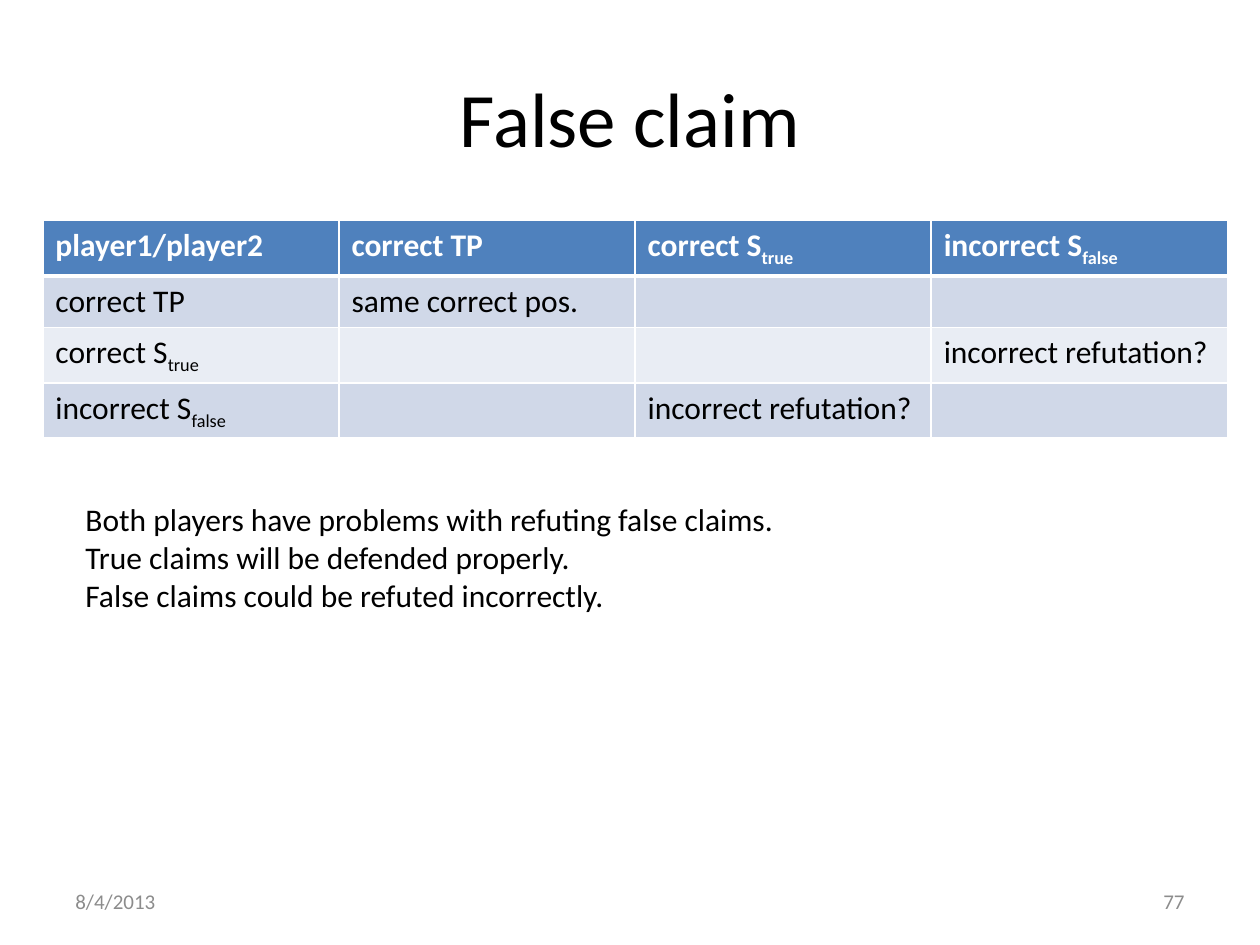
import dataclasses
import typing

import pptx
import pptx.dml.color
import pptx.enum.text
import pptx.oxml
import pptx.oxml.ns
import pptx.util

WIDTH, HEIGHT = 10, 7.5
FONT = "Calibri"
BLACK, WHITE, GREY = "000000", "FFFFFF", "8C8C8C"
HEADER_FILL, BAND_FILLS = "4F81BD", ("D0D8E8", "E9EDF4")
COLUMN_WIDTH, ROW_HEIGHT = 2.35, 0.41
TABLE_LEFT, TABLE_TOP = 0.34, 1.75
LEFT = pptx.enum.text.PP_ALIGN.LEFT
CENTER = pptx.enum.text.PP_ALIGN.CENTER
RIGHT = pptx.enum.text.PP_ALIGN.RIGHT
TOP = pptx.enum.text.MSO_ANCHOR.TOP
MIDDLE = pptx.enum.text.MSO_ANCHOR.MIDDLE

# An underscore starts the subscript of a cell's text.
ROWS = [
    ["player1/player2", "correct TP", "correct S_true", "incorrect S_false"],
    ["correct TP", "same correct pos.", "", ""],
    ["correct S_true", "", "", "incorrect refutation?"],
    ["incorrect S_false", "", "incorrect refutation?", ""],
]


@dataclasses.dataclass
class Label:
    """Text with its box as shares of the slide's width and height."""
    lines: list[str]
    left: float
    top: float
    width: float
    height: float
    size: int
    color: str = BLACK
    align: typing.Any = LEFT
    anchor: typing.Any = MIDDLE
    wrap: bool = True


TITLE = Label(["False claim"], 0.05, 0.04, 0.9, 1 / 6, 44, align=CENTER)
LABELS = [
    Label(["8/4/2013"], 0.05, 0.927, 0.233, 0.053, 12, GREY),
    Label(["77"], 0.717, 0.927, 0.233, 0.053, 12, GREY, RIGHT),
    Label(
        [
            "Both players have problems with refuting false claims.",
            "True claims will be defended properly.",
            "False claims could be refuted incorrectly.",
        ],
        0.058, 0.523, 0.58, 0.136, 18, anchor=TOP, wrap=False,
    ),
]


def rgb(color: str) -> pptx.dml.color.RGBColor:
    return pptx.dml.color.RGBColor.from_string(color)


def add_run(paragraph, text: str, size: int, color: str, bold: bool = False):
    run = paragraph.add_run()
    run.text = text
    formats = {"name": FONT, "size": pptx.util.Pt(size), "bold": bold}
    for name, value in formats.items():
        setattr(run.font, name, value)
    run.font.color.rgb = rgb(color)
    return run


def write_label(shape, label: Label) -> None:
    places = {
        "left": label.left * WIDTH, "top": label.top * HEIGHT,
        "width": label.width * WIDTH, "height": label.height * HEIGHT,
    }
    for name, value in places.items():
        setattr(shape, name, pptx.util.Inches(value))
    frame = shape.text_frame
    frame.word_wrap = label.wrap
    frame.vertical_anchor = label.anchor
    for index, line in enumerate(label.lines):
        paragraph = frame.add_paragraph() if index else frame.paragraphs[0]
        paragraph.alignment = label.align
        add_run(paragraph, line, label.size, label.color)


def add_borders(cell, widths: dict[str, int]) -> None:
    properties = cell._tc.get_or_add_tcPr()
    for side, points in widths.items():
        properties.append(pptx.oxml.parse_xml(
            f'<a:ln{side} {pptx.oxml.ns.nsdecls("a")} w="{pptx.util.Pt(points)}">'
            f'<a:solidFill><a:srgbClr val="{WHITE}"/></a:solidFill></a:ln{side}>'
        ))


def fill_cell(cell, text: str, row: int) -> None:
    header = row == 0
    # The line under the header is shared by the first two rows.
    add_borders(cell, {"L": 1, "R": 1, "T": 3 if row == 1 else 1, "B": 3 if header else 1})
    cell.fill.solid()
    cell.fill.fore_color.rgb = rgb(HEADER_FILL if header else BAND_FILLS[(row - 1) % 2])
    if not text:
        return
    paragraph = cell.text_frame.paragraphs[0]
    color = WHITE if header else BLACK
    base, _, subscript = text.partition("_")
    add_run(paragraph, base, 18, color, header)
    if subscript:
        run = add_run(paragraph, subscript, 18, color, header)
        run.font._element.set("baseline", "-25000")


def add_claim_table(slide) -> None:
    columns = len(ROWS[0])
    box = (TABLE_LEFT, TABLE_TOP, columns * COLUMN_WIDTH, len(ROWS) * ROW_HEIGHT)
    table = slide.shapes.add_table(len(ROWS), columns, *map(pptx.util.Inches, box)).table
    for row, texts in enumerate(ROWS):
        for column, text in enumerate(texts):
            fill_cell(table.cell(row, column), text, row)


def main() -> None:
    presentation = pptx.Presentation()
    presentation.slide_width = pptx.util.Inches(WIDTH)
    presentation.slide_height = pptx.util.Inches(HEIGHT)
    slide = presentation.slides.add_slide(presentation.slide_layouts[5])
    write_label(slide.shapes.title, TITLE)
    add_claim_table(slide)
    for label in LABELS:
        write_label(slide.shapes.add_textbox(0, 0, 0, 0), label)
    presentation.save("out.pptx")


if __name__ == "__main__":
    main()
